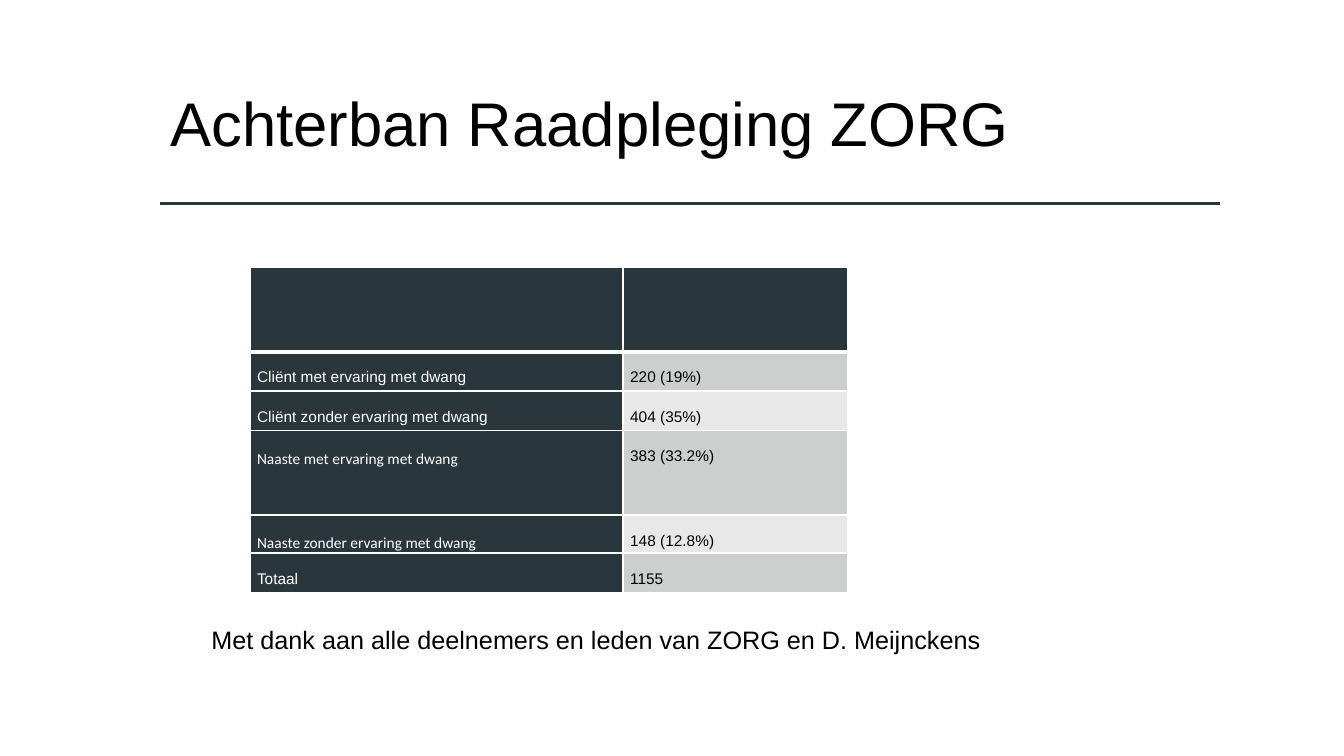
from lxml import etree
from pptx import Presentation
from pptx import util as u
from pptx.dml.color import RGBColor
from pptx.enum import shapes, text
from pptx.oxml.ns import qn

WIDTH, HEIGHT = u.Inches(13.33), u.Inches(7.5)
DARK, WHITE, BLACK = "29363B", "FFFFFF", "000000"
BANDS = ["CDCECE", "E8E8E8"]
COLUMNS = [27.76, 16.73]
HEADER_ROW = 11.2
ANSWERS = [
    ("Cliënt met ervaring met dwang", "220 (19%)", "Arial", 5.2),
    ("Cliënt zonder ervaring met dwang", "404 (35%)", "Arial", 5.2),
    ("Naaste met ervaring met dwang", "383 (33.2%)", "Calibri", 11.2),
    ("Naaste zonder ervaring met dwang", "148 (12.8%)", "Calibri", 4.8),
    ("Totaal", "1155", "Arial", 5.2),
]


def across(share):
    """Turn a percentage of the slide width into a length."""
    return int(WIDTH * share / 100)


def down(share):
    """Turn a percentage of the slide height into a length."""
    return int(HEIGHT * share / 100)


def color(value):
    """Turn a hex string into a colour."""
    return RGBColor.from_string(value)


def apply(target, formats):
    """Set each named attribute on the target."""
    for name, value in formats.items():
        setattr(target, name, value)


def write(para, words, size, font="Arial", ink=BLACK, **formats):
    """Write one formatted span into a paragraph."""
    apply(para, formats)
    span = para.add_run()
    span.text = words
    apply(span.font, {"size": u.Pt(size), "name": font})
    span.font.color.rgb = color(ink)


def add_text(page, box, words, size, fit=text.MSO_AUTO_SIZE.NONE, **formats):
    """Place a line of text in a box of left, top, width and height shares."""
    left, top, width, height = box
    frame = page.shapes.add_textbox(across(left), down(top), across(width), down(height)).text_frame
    apply(frame, {"word_wrap": True, "auto_size": fit})
    write(frame.paragraphs[0], words, size, **formats)


def add_heading(page, box):
    """Place the title with the rule along the bottom of its box."""
    left, top, width, height = box
    add_text(page, box, "Achterban Raadpleging ZORG", 44, line_spacing=0.9)
    level = down(top + height)
    rule = page.shapes.add_connector(
        shapes.MSO_CONNECTOR.STRAIGHT, across(left), level, across(left + width), level)
    rule.line.width = u.Pt(2.5)
    rule.line.color.rgb = color(DARK)
    etree.SubElement(rule._element.spPr, qn("a:effectLst"))


def style_cell(cell, fill, bottom=1):
    """Give a cell its margins, fill and white borders."""
    apply(cell, {"margin_left": u.Inches(0.07), "margin_right": u.Inches(0.07),
                 "margin_top": 0, "margin_bottom": 0})
    cell.fill.solid()
    cell.fill.fore_color.rgb = color(fill)
    properties = cell._tc.get_or_add_tcPr()
    for index, (side, points) in enumerate({"L": 1, "R": 1, "T": 1, "B": bottom}.items()):
        border = etree.Element(qn(f"a:ln{side}"), w=str(u.Pt(points)))
        paint = etree.SubElement(border, qn("a:solidFill"))
        etree.SubElement(paint, qn("a:srgbClr"), val=WHITE)
        properties.insert(index, border)


def add_answers(page, left, top):
    """Place the table of respondents with its top left corner at the given shares."""
    heights = [HEADER_ROW] + [answer[-1] for answer in ANSWERS]
    table = page.shapes.add_table(
        len(heights), len(COLUMNS), across(left), down(top),
        across(sum(COLUMNS)), down(sum(heights))).table
    for column, share in zip(table.columns, COLUMNS):
        column.width = across(share)
    for row, share in zip(table.rows, heights):
        row.height = down(share)
    for cell in table.rows[0].cells:
        style_cell(cell, DARK, bottom=3)
    for index, (group, count, font, _) in enumerate(ANSWERS):
        looks = [(group, font, WHITE, DARK), (count, "Arial", BLACK, BANDS[index % 2])]
        for cell, (words, face, ink, fill) in zip(table.rows[index + 1].cells, looks):
            style_cell(cell, fill)
            write(cell.text_frame.paragraphs[0], words, 11, face, ink,
                  line_spacing=2.0, space_after=u.Pt(8))


def main():
    """Build the slide and save it."""
    deck = Presentation()
    apply(deck, {"slide_width": WIDTH, "slide_height": HEIGHT})
    page = deck.slides.add_slide(deck.slide_layouts[6])
    add_heading(page, (11.93, 11.73, 78.84, 15.2))
    add_answers(page, 18.6, 35.33)
    add_text(page, (15, 81.87, 66, 5.33),
             "Met dank aan alle deelnemers en leden van ZORG en D. Meijnckens", 18,
             fit=text.MSO_AUTO_SIZE.SHAPE_TO_FIT_TEXT)
    deck.save("out.pptx")


if __name__ == "__main__":
    main()
